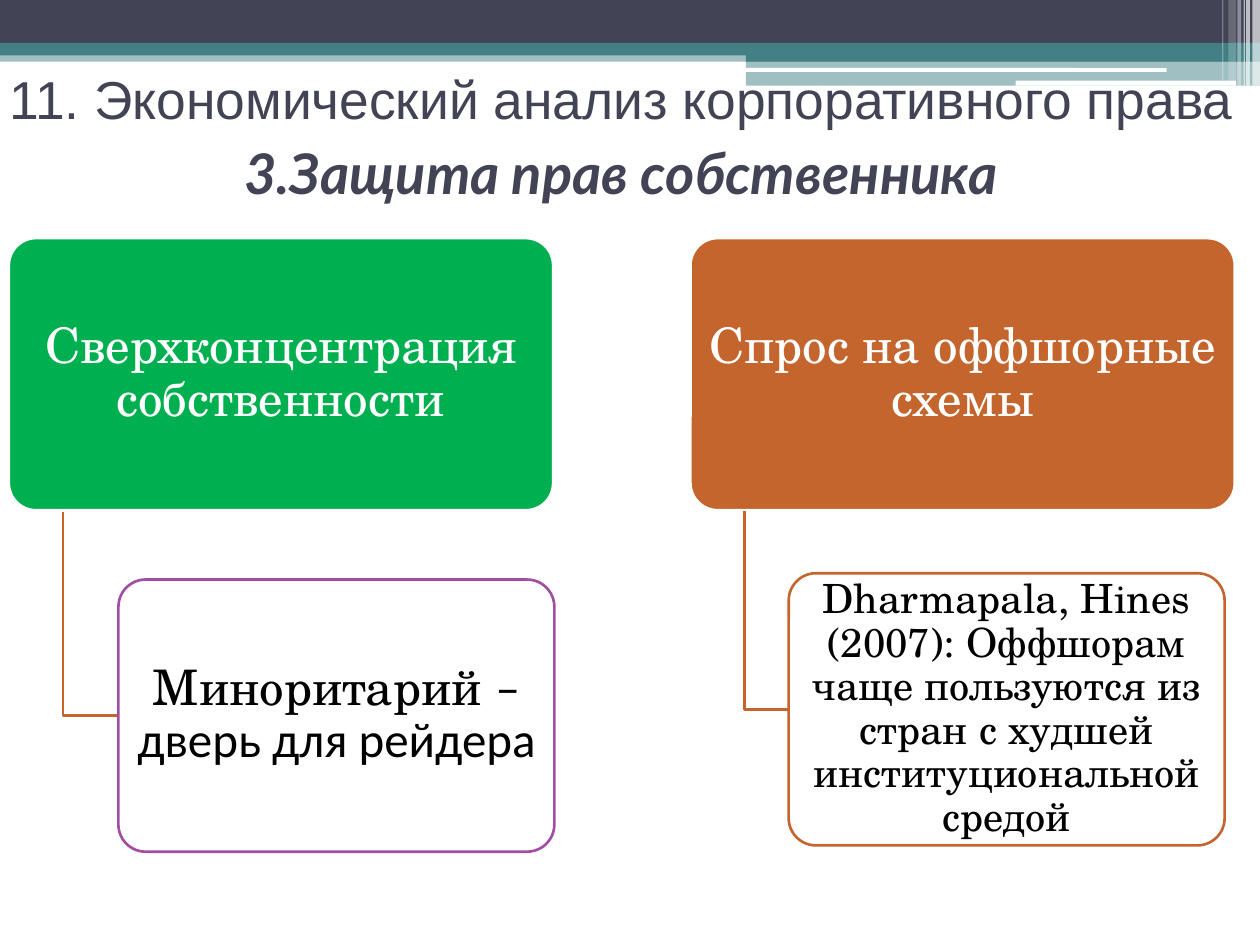
from lxml.etree import SubElement
from pptx import Presentation
from pptx.dml.color import RGBColor
from pptx.enum.shapes import MSO_SHAPE
from pptx.enum.text import MSO_ANCHOR, PP_ALIGN
from pptx.oxml.ns import qn
from pptx.util import Inches, Pt

SLATE = RGBColor(0x42, 0x44, 0x56)
TEAL = RGBColor(0x43, 0x80, 0x86)
GREEN = RGBColor(0x00, 0xB0, 0x50)
ORANGE = RGBColor(0xC4, 0x65, 0x2D)
PURPLE = RGBColor(0xA0, 0x4D, 0xA3)
WHITE = RGBColor(0xFF, 0xFF, 0xFF)
BLACK = RGBColor(0x00, 0x00, 0x00)
COLUMNS, ROWS = 100, 75
SERIF = "TeX Gyre Schola"


class SlideBuilder:
    """Draws styled elements on a slide with a grid of 100 columns and 75 rows."""

    def __init__(self, presentation):
        """Set the slide size and add a blank slide."""
        presentation.slide_width, presentation.slide_height = Inches(10), Inches(7.5)
        self.column = presentation.slide_width / COLUMNS
        self.row = presentation.slide_height / ROWS
        self.slide = presentation.slides.add_slide(presentation.slide_layouts[6])

    def place(self, left, top, width, height):
        """Turn grid units into slide lengths."""
        return (round(left * self.column), round(top * self.row),
                round(width * self.column), round(height * self.row))

    def block(self, area, fill, opacity=100, kind=MSO_SHAPE.RECTANGLE, radius=None):
        """Add a filled shape without outline."""
        shape = self.slide.shapes.add_shape(kind, *self.place(*area))
        shape.shadow.inherit = False
        shape.fill.solid()
        shape.fill.fore_color.rgb = fill
        shape.line.fill.background()
        if radius is not None:
            shape.adjustments[0] = radius
        if opacity < 100:
            properties = shape.element.find(qn("p:spPr"))
            color = properties.find(qn("a:solidFill"))[0]
            SubElement(color, qn("a:alpha"), val=str(opacity * 1000))
        return shape

    def fill_text(self, frame, runs, size, color, bold=False, italic=False):
        """Fill a text frame with one centred paragraph of (text, font) runs."""
        frame.word_wrap = True
        frame.vertical_anchor = MSO_ANCHOR.MIDDLE
        paragraph = frame.paragraphs[0]
        paragraph.alignment = PP_ALIGN.CENTER
        paragraph.font.size = Pt(size)
        paragraph.font.color.rgb = color
        paragraph.font.bold, paragraph.font.italic = bold, italic
        paragraph.font.name = runs[0][1]
        for text, font in runs:
            run = paragraph.add_run()
            run.text = text
            if font != runs[0][1]:
                run.font.name = font
        return paragraph

    def heading(self, area, text, font, size, **style):
        """Add a centred heading."""
        box = self.slide.shapes.add_textbox(*self.place(*area))
        self.fill_text(box.text_frame, [(text, font)], size, SLATE, **style)

    def card(self, area, runs, size, color, fill, outline, opacity=100):
        """Add a rounded card with text."""
        shape = self.block(area, fill, opacity, MSO_SHAPE.ROUNDED_RECTANGLE, 0.1)
        shape.line.color.rgb = outline
        shape.line.width = Pt(1.5)
        frame = shape.text_frame
        frame.margin_left = frame.margin_right = 0
        frame.margin_top = frame.margin_bottom = 0
        self.fill_text(frame, runs, size, color).line_spacing = 0.9

    def elbow(self, left, top, right, bottom):
        """Add a line going down and then right."""
        points = [self.place(x, y, 0, 0)[:2]
                  for x, y in ((left, top), (left, bottom), (right, bottom))]
        builder = self.slide.shapes.build_freeform(*points[0])
        builder.add_line_segments(points[1:], close=False)
        shape = builder.convert_to_shape()
        shape.shadow.inherit = False
        shape.fill.background()
        shape.line.color.rgb = ORANGE
        shape.line.width = Pt(1.5)

    def banner(self):
        """Add the coloured bands and white stripes at the top."""
        for left, top, height, fill, opacity in (
                (0, 4, 0.9, TEAL, 50), (0, 0, 3.4, SLATE, 100), (0, 3.4, 1, TEAL, 100),
                (59.2, 3.9, 1, TEAL, 100), (59.2, 4.8, 2, TEAL, 50)):
            self.block((left, top, COLUMNS - left, height), fill, opacity)
        for area in ((59.1, 5.4, 33.5, 0.3), (80.6, 6.4, 17.5, 0.4)):
            self.block(area, WHITE, kind=MSO_SHAPE.ROUNDED_RECTANGLE, radius=0.17)
        for left, width, height, opacity in (
                (99.4, 0.6, 6.8, 65), (98.9, 0.3, 6.8, 65), (98.7, 0.1, 6.8, 60),
                (98.2, 0.3, 6.8, 40), (97.5, 0.6, 6.4, 20), (97, 0.1, 6.4, 30)):
            self.block((left, 0, width, height), WHITE, opacity)

    def branch(self, left, fill, cause, child_left, child_top, outline, effect, size):
        """Add a cause card joined to its effect card."""
        top, height = 18.9, 21.6
        self.card((left, top, 43.2, height), [(cause, SERIF)], 28, WHITE, fill, WHITE)
        self.elbow(left + 4.3, top + height + 0.1, child_left, child_top + height / 2)
        self.card((child_left, child_top, 34.6, height), effect, size, BLACK,
                  WHITE, outline, 90)


def main():
    """Build and save the slide."""
    presentation = Presentation()
    builder = SlideBuilder(presentation)
    builder.banner()
    builder.branch(0.7, GREEN, "Сверхконцентрация собственности", 9.4, 46, PURPLE,
                   [("Миноритарий ", SERIF), ("– дверь для рейдера", "Calibri")], 28)
    builder.branch(54.8, ORANGE, "Спрос на оффшорные схемы", 62.6, 45.5, ORANGE,
                   [("Dharmapala, Hines (2007): Оффшорам чаще пользуются из стран "
                     "с худшей институциональной средой", SERIF)], 23)
    builder.heading((2.8, 7.8, 93, 11.7), "3.Защита прав собственника", "Lato", 32,
                    bold=True, italic=True)
    builder.heading((-1.3, 1.2, 101.2, 13.1),
                    "11. Экономический анализ корпоративного права", "Arial", 30.5)
    presentation.save("out.pptx")


if __name__ == "__main__":
    main()
